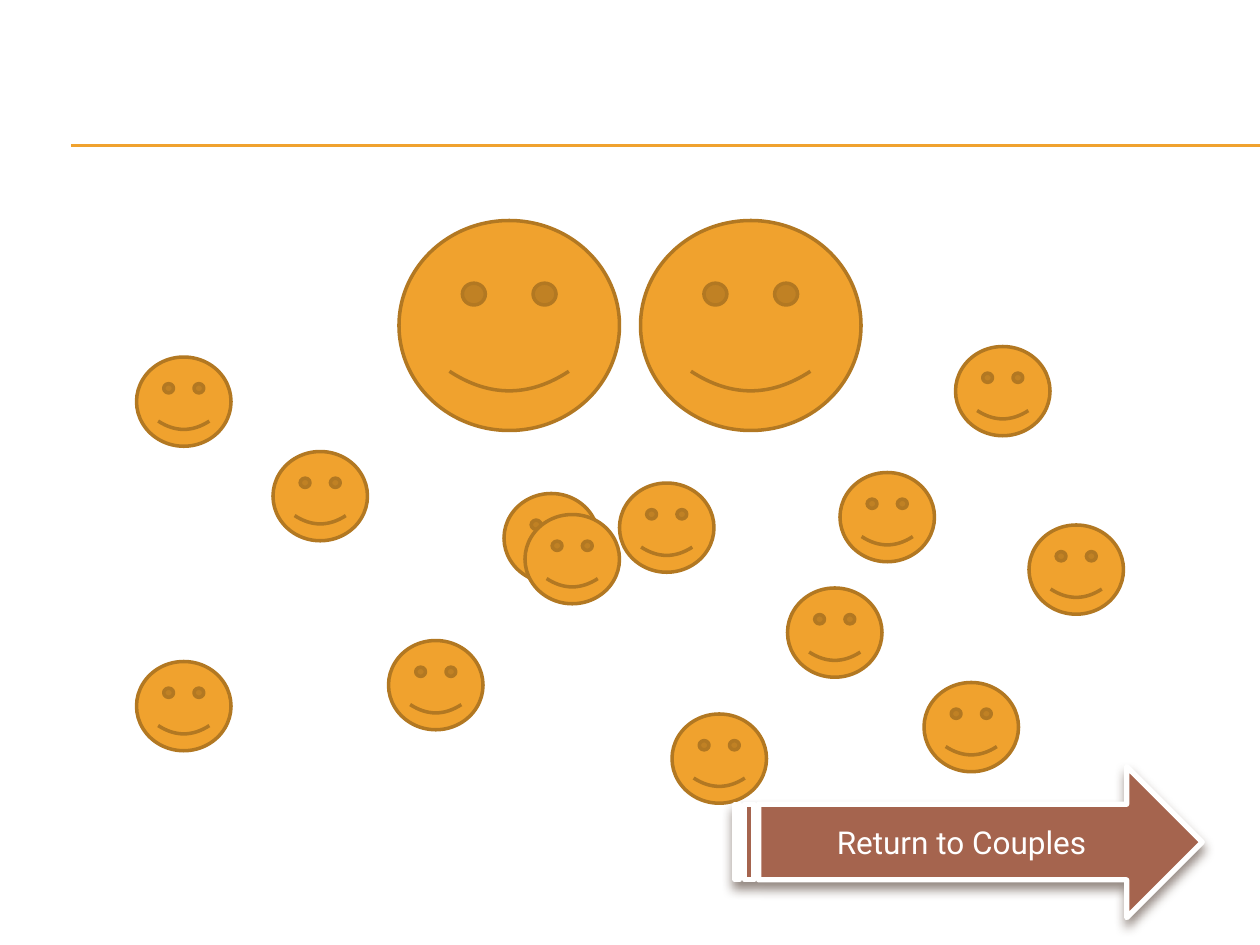
import pptx
import pptx.util
import pptx.dml.color
import pptx.enum.shapes
import pptx.enum.text
import pptx.oxml
import pptx.oxml.ns

Pt = pptx.util.Pt
SHAPES = pptx.enum.shapes.MSO_SHAPE

# Left and top of each face within the crowd, from back to front
FACES_BEHIND = [(210, 156), (468, 72), (510, 174), (402, 144),
                (450, 264), (0, 78), (144, 240), (78, 132)]
COUPLE = [(150, 0), (288, 0)]
FACES_IN_FRONT = [(276, 150), (306, 282), (0, 252), (372, 210), (222, 168)]
SMALL_FACE = (54, 51)
LARGE_FACE = (126, 120)


def color(hex_string):
    return pptx.dml.color.RGBColor.from_string(hex_string)


def add_filled_shape(page, kind, box, fill, line, line_width):
    shape = page.shapes.add_shape(kind, *(Pt(length) for length in box))
    shape.shadow.inherit = False
    shape.fill.solid()
    shape.fill.fore_color.rgb = color(fill)
    shape.line.color.rgb = color(line)
    shape.line.width = Pt(line_width)
    return shape


def add_header_rule(page, box):
    left, top, width, height = box
    for y in (top, top + height):
        rule = page.shapes.add_connector(
            pptx.enum.shapes.MSO_CONNECTOR.STRAIGHT,
            Pt(left), Pt(y), Pt(left + width), Pt(y))
        rule.line.color.rgb = color("F0A22E")
        rule.line.width = Pt(0.75)
        properties = rule.element.spPr
        properties.append(pptx.oxml.parse_xml(
            f'<a:effectLst {pptx.oxml.ns.nsdecls("a")}/>'))


def add_crowd(page, box):
    left, top = box[:2]
    layers = [(FACES_BEHIND, SMALL_FACE), (COUPLE, LARGE_FACE),
              (FACES_IN_FRONT, SMALL_FACE)]
    for places, size in layers:
        for x, y in places:
            add_filled_shape(page, SHAPES.SMILEY_FACE,
                             (left + x, top + y, *size), "F0A22E", "B27822", 2)


def add_return_arrow(page, box):
    arrow = add_filled_shape(page, SHAPES.STRIPED_RIGHT_ARROW, box,
                             "A5644E", "FFFFFF", 3)
    # Soft shadow below the arrow
    effects = arrow.element.spPr.find(pptx.oxml.ns.qn("a:effectLst"))
    effects.append(pptx.oxml.parse_xml(
        f'<a:outerShdw {pptx.oxml.ns.nsdecls("a")} blurRad="{Pt(6)}" '
        f'dist="{Pt(4)}" dir="5400000" rotWithShape="0">'
        '<a:srgbClr val="4E3B30"><a:alpha val="60000"/></a:srgbClr>'
        '</a:outerShdw>'))
    # Label
    frame = arrow.text_frame
    frame.text = "Return to Couples"
    frame.word_wrap = True
    frame.vertical_anchor = pptx.enum.text.MSO_ANCHOR.MIDDLE
    para = frame.paragraphs[0]
    para.alignment = pptx.enum.text.PP_ALIGN.CENTER
    span = para.runs[0]
    span.font.name = "Roboto"
    span.font.size = Pt(18)
    span.font.color.rgb = color("FFFFFF")


def main():
    deck = pptx.Presentation()
    deck.slide_width, deck.slide_height = Pt(720), Pt(540)
    page = deck.slides.add_slide(deck.slide_layouts[6])
    add_header_rule(page, (40.5, 82.8, 679.5, 0.6))
    add_crowd(page, (78, 126, 564, 333))
    add_return_arrow(page, (420, 438, 267, 86.4))
    deck.save("out.pptx")


if __name__ == "__main__":
    main()
